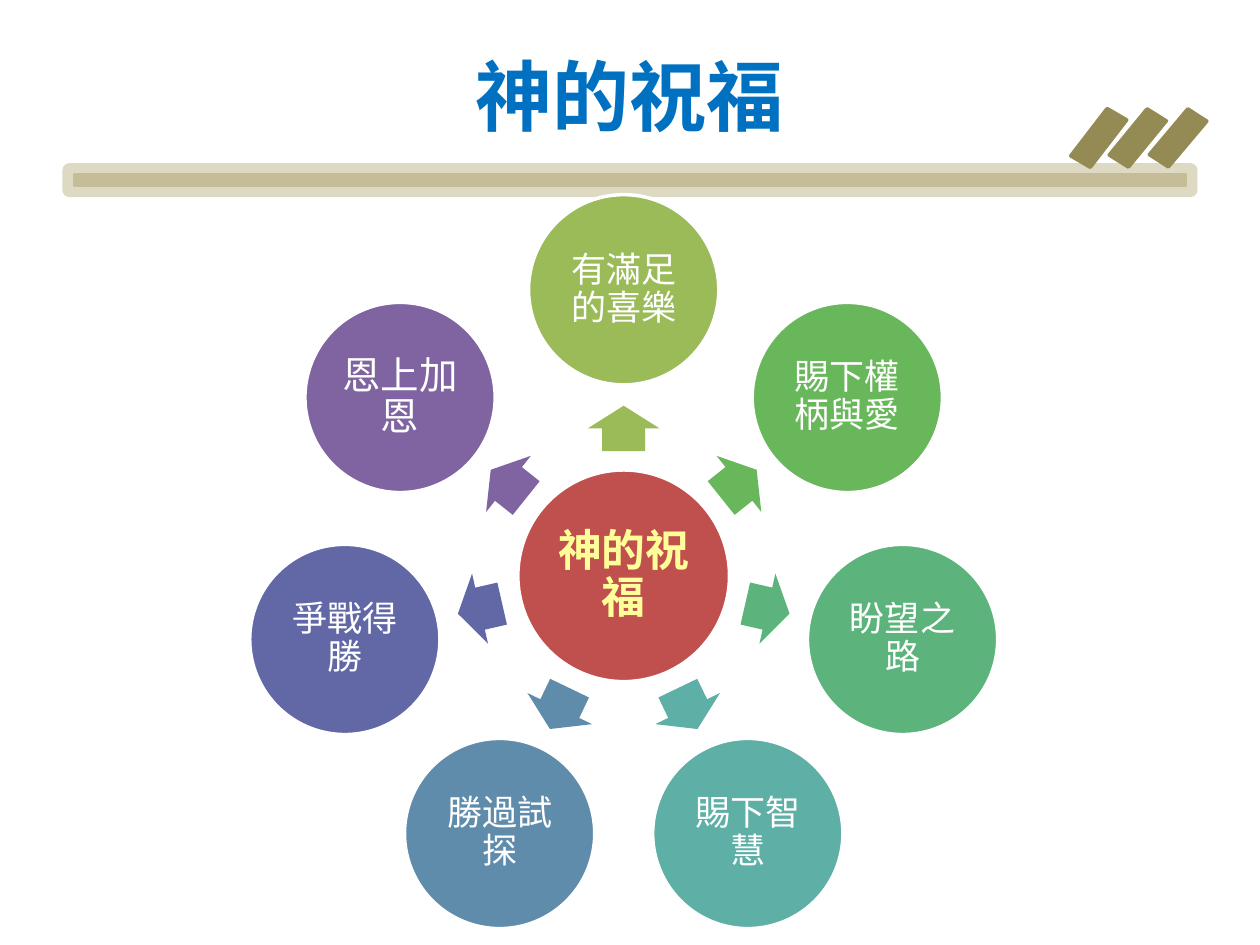
from dataclasses import dataclass
from math import cos, radians, sin

from lxml.etree import SubElement
from pptx import Presentation
from pptx.dml.color import RGBColor
from pptx.enum.shapes import MSO_SHAPE as Preset
from pptx.enum.text import MSO_ANCHOR as Anchor, PP_ALIGN as Align
from pptx.oxml.ns import qn
from pptx.shapes.autoshape import Shape
from pptx.shapes.shapetree import SlideShapes
from pptx.util import Inches, Pt

CJK_FONT = "Noto Sans CJK SC"
COLOURS = {
    "title": "0070C0", "bar": "DDD9C3", "stripe": "C4BD97", "slash": "948A54",
    "hub": "C0504D", "hub text": "FFFF99", "white": "FFFFFF",
    "olive": "9BBB59", "green": "69B75B", "jade": "5CB37C", "teal": "5EAFA6",
    "steel": "608CAB", "indigo": "6267A6", "purple": "8064A2",
}
CENTRE_X, CENTRE_Y = 4.95, 4.57
HUB_SIZE, BLESSING_SIZE = 1.68, 1.51
BLESSING_RADIUS, ARROW_RADIUS = 2.27, 1.17
ARROW_LENGTH, ARROW_BREADTH = 0.36, 0.57


@dataclass(frozen=True)
class Lettering:
    size: float
    colour: str
    font: str = "Arial"
    bold: bool = False


@dataclass(frozen=True)
class Blessing:
    text: str
    colour: str
    size: float = 20


@dataclass(frozen=True)
class Slash:
    left: float
    rotation: float


BLESSINGS = [
    Blessing("有滿足的喜樂", "olive"),
    Blessing("賜下權柄與愛", "green"),
    Blessing("盼望之路", "jade"),
    Blessing("賜下智慧", "teal"),
    Blessing("勝過試探", "steel"),
    Blessing("爭戰得勝", "indigo"),
    Blessing("恩上加恩", "purple", 22),
]
SLASHES = [Slash(8.6, 30.3), Slash(8.91, 32.1), Slash(9.23, 32.8)]


def rgb(colour: str) -> RGBColor:
    return RGBColor.from_string(COLOURS[colour])


def add_preset(shapes: SlideShapes, preset: Preset, left: float, top: float,
               width: float, height: float, fill: str, line: str = "",
               rotation: float = 0) -> Shape:
    shape = shapes.add_shape(preset, Inches(left), Inches(top), Inches(width), Inches(height))
    shape.shadow.inherit = False
    shape.rotation = rotation
    shape.fill.solid()
    shape.fill.fore_color.rgb = rgb(fill)
    if line:
        shape.line.color.rgb = rgb(line)
        shape.line.width = Pt(2)
    else:
        shape.line.fill.background()
    return shape


def write(shape: Shape, text: str, lettering: Lettering, inset: float,
          line_spacing: float = 1) -> None:
    frame = shape.text_frame
    frame.word_wrap = True
    frame.vertical_anchor = Anchor.MIDDLE
    frame.margin_left = frame.margin_right = Inches(inset)
    frame.margin_top = frame.margin_bottom = Inches(inset)
    paragraph = frame.paragraphs[0]
    paragraph.alignment = Align.CENTER
    paragraph.line_spacing = line_spacing
    run = paragraph.add_run()
    run.text = text
    run.font.size = Pt(lettering.size)
    run.font.bold = lettering.bold
    run.font.color.rgb = rgb(lettering.colour)
    run.font.name = lettering.font
    SubElement(run.font._element, qn("a:ea")).set("typeface", CJK_FONT)


def add_circle(shapes: SlideShapes, x: float, y: float, size: float, fill: str,
               text: str, lettering: Lettering) -> None:
    circle = add_preset(shapes, Preset.OVAL, x - size / 2, y - size / 2, size, size, fill, "white")
    write(circle, text, lettering, 0.03, 0.9)


def add_header(shapes: SlideShapes) -> None:
    add_preset(shapes, Preset.ROUNDED_RECTANGLE, 0.51, 1.31, 8.98, 0.24, "bar", "bar")
    for slash in SLASHES:
        add_preset(shapes, Preset.PARALLELOGRAM, slash.left, 0.86, 0.24, 0.47,
                   "slash", "slash", slash.rotation)
    add_preset(shapes, Preset.RECTANGLE, 0.59, 1.39, 8.82, 0.08, "stripe", "stripe")
    title = shapes.add_textbox(Inches(0.5), Inches(0.13), Inches(9), Inches(1.25))
    write(title, "神的祝福", Lettering(44, "title", CJK_FONT, True), 0.05)


def add_blessing(shapes: SlideShapes, blessing: Blessing, angle: float) -> None:
    across, down = cos(radians(angle)), sin(radians(angle))
    arrow = add_preset(shapes, Preset.RIGHT_ARROW,
                       CENTRE_X + ARROW_RADIUS * across - ARROW_LENGTH / 2,
                       CENTRE_Y + ARROW_RADIUS * down - ARROW_BREADTH / 2,
                       ARROW_LENGTH, ARROW_BREADTH, blessing.colour, rotation=angle)
    arrow.adjustments[0] = 0.6
    arrow.adjustments[1] = 0.5
    add_circle(shapes, CENTRE_X + BLESSING_RADIUS * across, CENTRE_Y + BLESSING_RADIUS * down,
               BLESSING_SIZE, blessing.colour, blessing.text, Lettering(blessing.size, "white"))


def main() -> None:
    deck = Presentation()
    deck.slide_width, deck.slide_height = Inches(10), Inches(7.5)
    shapes = deck.slides.add_slide(deck.slide_layouts[6]).shapes
    add_header(shapes)
    add_circle(shapes, CENTRE_X, CENTRE_Y, HUB_SIZE, "hub", "神的祝福",
               Lettering(25, "hub text", CJK_FONT, True))
    for index, blessing in enumerate(BLESSINGS):
        add_blessing(shapes, blessing, index * 360 / len(BLESSINGS) - 90)
    deck.save("out.pptx")


if __name__ == "__main__":
    main()
